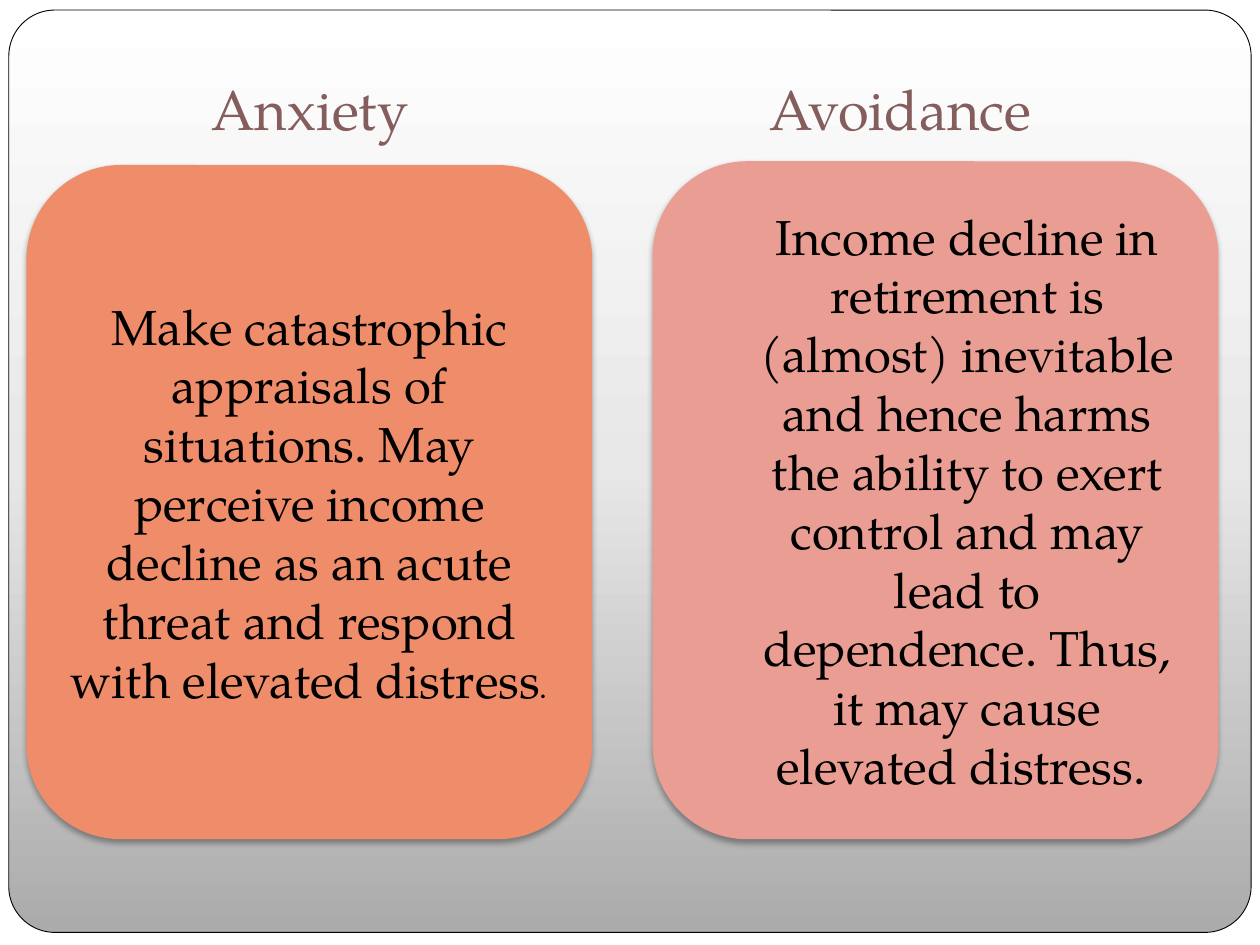
from lxml import etree
from pptx import Presentation
from pptx.dml.color import RGBColor
from pptx.enum.shapes import MSO_SHAPE
from pptx.enum.text import MSO_ANCHOR, PP_ALIGN
from pptx.oxml import parse_xml
from pptx.oxml.ns import nsdecls, qn
from pptx.util import Inches, Pt

ROUNDED = MSO_SHAPE.ROUNDED_RECTANGLE
MIDDLE = MSO_ANCHOR.MIDDLE
CENTER = PP_ALIGN.CENTER
FONT = "TeX Gyre Pagella"
BLACK = "000000"
HEADING_COLOR = "855D5D"
FRAME_STOPS = [(0, "ABABAB"), (50, "E7E7E7"), (100, "FFFFFF")]

SHADOW = (
    f'<a:effectLst {nsdecls("a")}>'
    f'<a:outerShdw blurRad="{Pt(3.5)}" dist="{Pt(2.2)}" dir="5400000" rotWithShape="0">'
    f'<a:srgbClr val="{BLACK}"><a:alpha val="32000"/></a:srgbClr>'
    "</a:outerShdw></a:effectLst>"
)


def color(hex_string):
    return RGBColor.from_string(hex_string)


def write(shape, runs, size, text_color):
    """Fill a shape with one centred paragraph; runs are (text, own size or None)."""
    frame = shape.text_frame
    frame.word_wrap = True
    frame.vertical_anchor = MIDDLE
    paragraph = frame.paragraphs[0]
    paragraph.alignment = CENTER
    paragraph.font.name = FONT
    paragraph.font.size = Pt(size)
    paragraph.font.color.rgb = color(text_color)
    for text, own_size in runs:
        run = paragraph.add_run()
        run.text = text
        if own_size:
            run.font.size = Pt(own_size)
    return paragraph


presentation = Presentation()
presentation.slide_width = Inches(10)
presentation.slide_height = Inches(7.5)
slide = presentation.slides.add_slide(presentation.slide_layouts[6])
shapes = slide.shapes

# Rounded frame, shaded from grey at the bottom to white at the top
frame_shape = shapes.add_shape(
    ROUNDED, Inches(0.07), Inches(0.08), Inches(9.86), Inches(7.32))
frame_shape.adjustments[0] = 0.05
frame_shape.shadow.inherit = False
frame_shape.line.color.rgb = color(BLACK)
frame_shape.line.width = Pt(0.5)
frame_shape.fill.gradient()
gradient = frame_shape._element.spPr.find(qn("a:gradFill"))
stop_list = gradient.find(qn("a:gsLst"))
for stop in list(stop_list):
    stop_list.remove(stop)
for position, stop_color in FRAME_STOPS:
    stop = etree.SubElement(stop_list, qn("a:gs"), pos=str(position * 1000))
    etree.SubElement(stop, qn("a:srgbClr"), val=stop_color)
gradient.find(qn("a:lin")).set("ang", str(270 * 60000))

# Cards: left, top, fill, left indent, runs
CARD_WIDTH, CARD_BOTTOM = 4.49, 6.66
cards = [
    (5.18, 1.28, "E99D93", 0.5, [
        ("Income decline in retirement is (almost) inevitable and hence harms "
         "the ability to exert control and may lead to dependence. Thus, "
         "it may cause elevated distress. ", None)]),
    (0.21, 1.31, "EF8C6A", 0, [
        ("Make catastrophic appraisals of situations. May perceive income "
         "decline as an acute threat and respond with elevated distress", None),
        (".", 18)]),
]
for left, top, fill, indent, runs in cards:
    card = shapes.add_shape(ROUNDED, Inches(left), Inches(top),
                            Inches(CARD_WIDTH), Inches(CARD_BOTTOM - top))
    card.fill.solid()
    card.fill.fore_color.rgb = color(fill)
    card.line.fill.background()
    card._element.spPr.append(parse_xml(SHADOW))
    paragraph = write(card, runs, 28, BLACK)
    if indent:
        properties = paragraph._p.get_or_add_pPr()
        properties.set("marL", str(Inches(indent)))
        properties.set("indent", "0")

# Headings above the cards
for heading, left, width in [("Anxiety ", 0.43, 4.17), ("Avoidance ", 4.92, 4.57)]:
    box = shapes.add_textbox(Inches(left), Inches(0.5), Inches(width), Inches(0.71))
    write(box, [(heading, None)], 32, HEADING_COLOR)

presentation.save("out.pptx")
